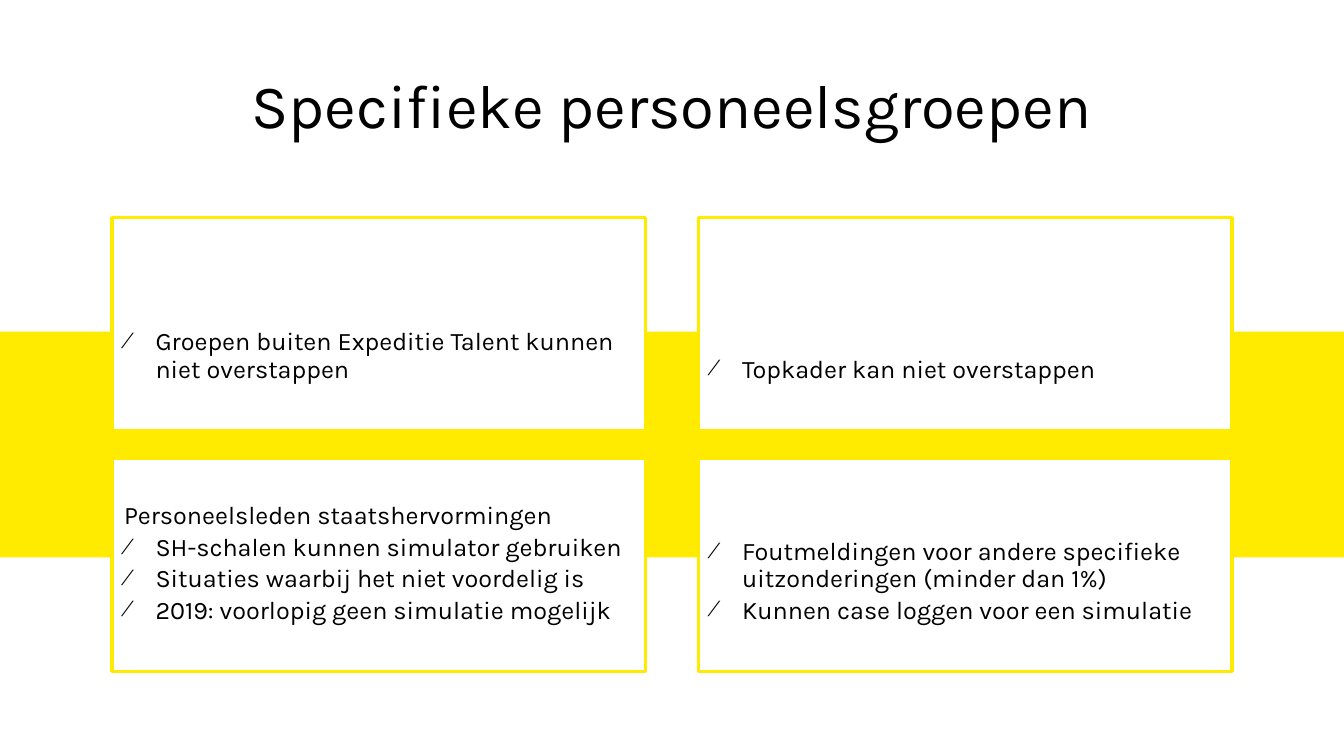
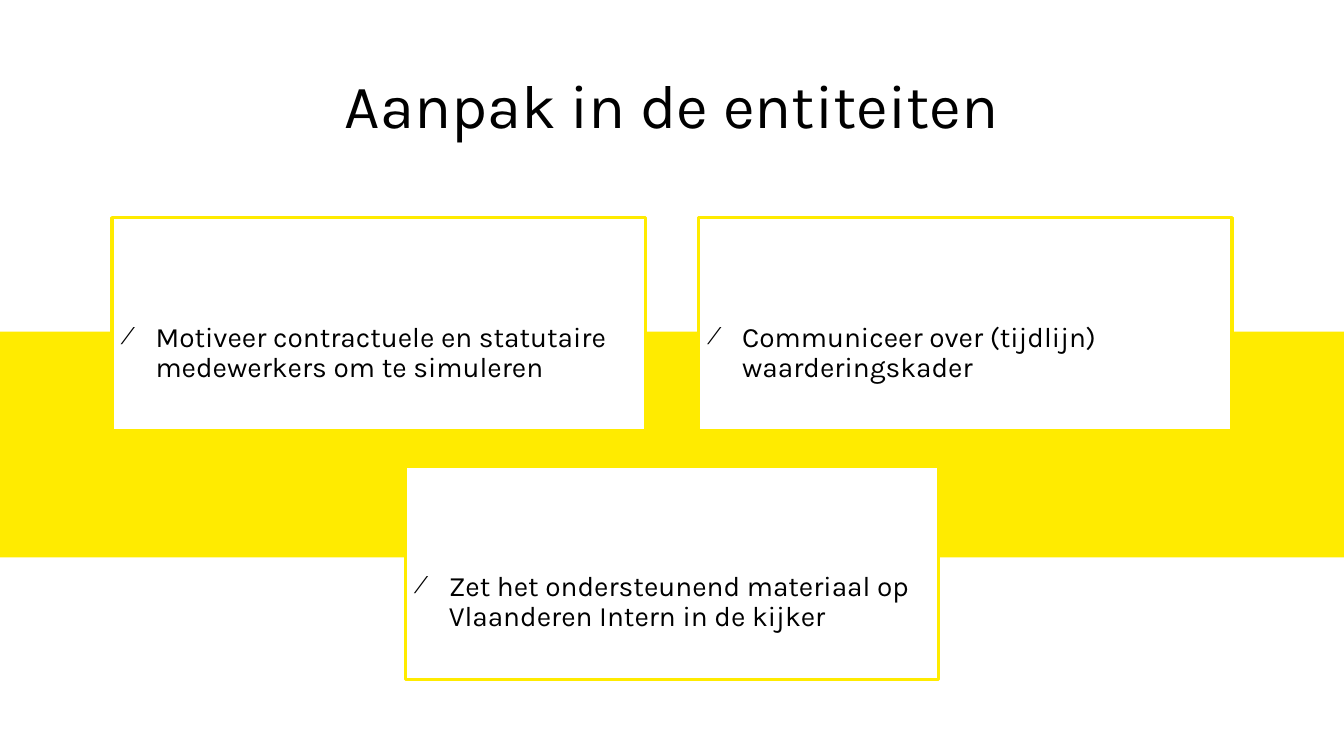
from dataclasses import dataclass

from lxml import etree
from pptx import Presentation
from pptx.dml.color import RGBColor
from pptx.enum.shapes import MSO_SHAPE
from pptx.enum.text import MSO_ANCHOR, PP_ALIGN
from pptx.oxml.ns import qn
from pptx.util import Pt

RECTANGLE = MSO_SHAPE.RECTANGLE
MIDDLE = MSO_ANCHOR.MIDDLE
BOTTOM = MSO_ANCHOR.BOTTOM
CENTER = PP_ALIGN.CENTER

YELLOW = RGBColor(0xFF, 0xEB, 0x00)
WHITE = RGBColor(0xFF, 0xFF, 0xFF)
BLACK = RGBColor(0x00, 0x00, 0x00)
FONT = "Karla"

SLIDE_WIDTH, SLIDE_HEIGHT = 960, 540
BAND_TOP, BAND_HEIGHT = 236.9, 161.2
CARD_WIDTH, CARD_HEIGHT, CARD_GAP = 381, 152, 38
LEFT_COLUMN = (SLIDE_WIDTH - 2 * CARD_WIDTH - CARD_GAP) / 2
RIGHT_COLUMN = LEFT_COLUMN + CARD_WIDTH + CARD_GAP
MIDDLE_COLUMN = (SLIDE_WIDTH - CARD_WIDTH) / 2
TOP_ROW, BOTTOM_ROW, LOW_ROW = 155.5, 327.6, 333.4
BULLET_INDENT = 22.5


@dataclass(frozen=True)
class Card:
    left: float
    top: float
    bullets: tuple[str, ...]
    heading: str = ""


@dataclass(frozen=True)
class SlideContent:
    title: str
    text_size: int
    cards: tuple[Card, ...]


SLIDES = (
    SlideContent("Specifieke personeelsgroepen", 18, (
        Card(LEFT_COLUMN, TOP_ROW,
             ("Groepen buiten Expeditie Talent kunnen niet overstappen",)),
        Card(RIGHT_COLUMN, TOP_ROW, ("Topkader kan niet overstappen",)),
        Card(LEFT_COLUMN, BOTTOM_ROW,
             ("SH-schalen kunnen simulator gebruiken",
              "Situaties waarbij het niet voordelig is",
              "2019: voorlopig geen simulatie mogelijk"),
             heading="Personeelsleden staatshervormingen"),
        Card(RIGHT_COLUMN, BOTTOM_ROW,
             ("Foutmeldingen voor andere specifieke uitzonderingen (minder dan 1%)",
              "Kunnen case loggen voor een simulatie")),
    )),
    SlideContent("Aanpak in de entiteiten", 20, (
        Card(LEFT_COLUMN, TOP_ROW,
             ("Motiveer contractuele en statutaire medewerkers om te simuleren",)),
        Card(RIGHT_COLUMN, TOP_ROW,
             ("Communiceer over (tijdlijn) waarderingskader",)),
        Card(MIDDLE_COLUMN, LOW_ROW,
             ("Zet het ondersteunend materiaal op Vlaanderen Intern in de kijker",)),
    )),
)


def add_rectangle(slide, left: float, top: float, width: float, height: float,
                  fill: RGBColor):
    shape = slide.shapes.add_shape(RECTANGLE, Pt(left), Pt(top), Pt(width), Pt(height))
    shape.shadow.inherit = False
    shape.fill.solid()
    shape.fill.fore_color.rgb = fill
    shape.line.fill.background()
    return shape


def set_frame(frame, anchor, side: float, bottom: float) -> None:
    frame.word_wrap = True
    frame.vertical_anchor = anchor
    frame.margin_left = frame.margin_right = Pt(side)
    frame.margin_top = Pt(0)
    frame.margin_bottom = Pt(bottom)


def set_font(paragraph, size: int) -> None:
    paragraph.font.name = FONT
    paragraph.font.size = Pt(size)
    paragraph.font.color.rgb = BLACK


def add_bullet(paragraph) -> None:
    properties = paragraph._p.get_or_add_pPr()
    properties.set("marL", str(Pt(BULLET_INDENT)))
    properties.set("indent", str(-Pt(BULLET_INDENT)))
    etree.SubElement(properties, qn("a:buSzPct"), val="90000")
    etree.SubElement(properties, qn("a:buFont"), typeface=FONT)
    etree.SubElement(properties, qn("a:buChar"), char="⁄")


def add_title(slide, title: str) -> None:
    shape = slide.shapes.add_textbox(Pt(29.5), Pt(33.8), Pt(901.4), Pt(95.8))
    set_frame(shape.text_frame, MIDDLE, 0, 0)
    paragraph = shape.text_frame.paragraphs[0]
    paragraph.text = title
    paragraph.alignment = CENTER
    paragraph.line_spacing = Pt(38)
    set_font(paragraph, 44)


def add_card(slide, card: Card, text_size: int) -> None:
    shape = add_rectangle(slide, card.left, card.top, CARD_WIDTH, CARD_HEIGHT, WHITE)
    shape.line.color.rgb = YELLOW
    shape.line.width = Pt(2.25)
    frame = shape.text_frame
    set_frame(frame, BOTTOM, 8.6, 33.5)
    lines = ((card.heading,) if card.heading else ()) + card.bullets
    for index, line in enumerate(lines):
        paragraph = frame.add_paragraph() if index else frame.paragraphs[0]
        paragraph.text = line
        paragraph.alignment = PP_ALIGN.LEFT
        paragraph.line_spacing = 0.9
        paragraph.space_before = Pt(3 if index else 0)
        if line != card.heading:
            add_bullet(paragraph)
        set_font(paragraph, text_size)


def add_slide(presentation, content: SlideContent) -> None:
    slide = presentation.slides.add_slide(presentation.slide_layouts[6])
    add_rectangle(slide, 0, BAND_TOP, SLIDE_WIDTH, BAND_HEIGHT, YELLOW)
    add_title(slide, content.title)
    for card in content.cards:
        add_card(slide, card, content.text_size)


def main() -> None:
    presentation = Presentation()
    presentation.slide_width = Pt(SLIDE_WIDTH)
    presentation.slide_height = Pt(SLIDE_HEIGHT)
    for content in SLIDES:
        add_slide(presentation, content)
    presentation.save("out.pptx")


if __name__ == "__main__":
    main()
